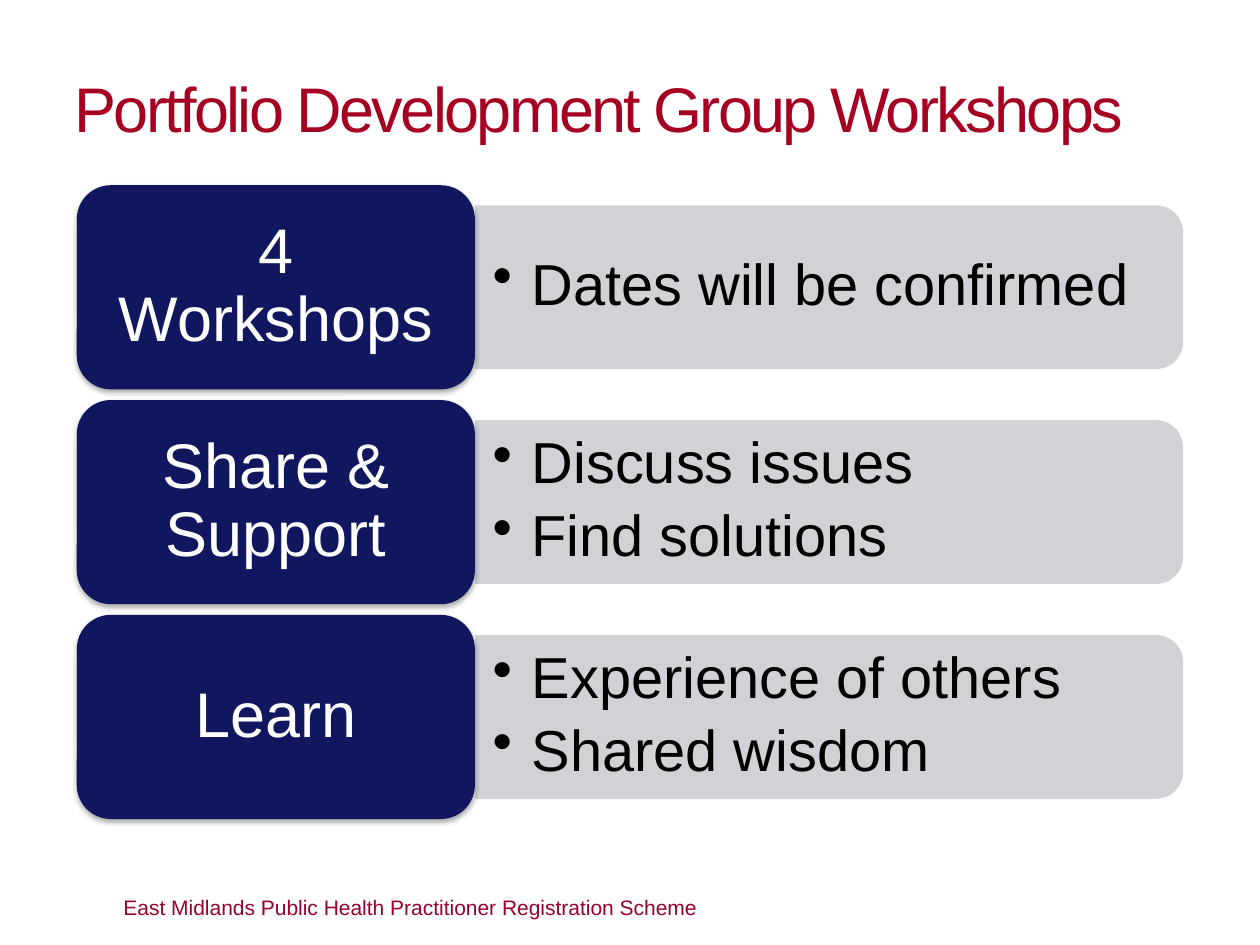
from lxml import etree
from pptx import Presentation
from pptx.dml.color import RGBColor
from pptx.enum.shapes import MSO_SHAPE
from pptx.enum.text import MSO_ANCHOR, PP_ALIGN
from pptx.oxml import parse_xml
from pptx.oxml.ns import nsdecls, qn
from pptx.util import Inches, Pt

ROUNDED = MSO_SHAPE.ROUNDED_RECTANGLE
ROUNDED_TOP = MSO_SHAPE.ROUND_2_SAME_RECTANGLE
MIDDLE, BOTTOM = MSO_ANCHOR.MIDDLE, MSO_ANCHOR.BOTTOM
LEFT, CENTER = PP_ALIGN.LEFT, PP_ALIGN.CENTER

COLORS = {"title": "A50021", "footer": "98002E", "label": "11175E",
          "panel": "CCCCD2", "light": "FFFFFF", "dark": "000000"}
FONT = "Arial"

ROWS = [
    ("4 Workshops", ["Dates will be confirmed"]),
    ("Share & Support", ["Discuss issues", "Find solutions"]),
    ("Learn", ["Experience of others", "Shared wisdom"]),
]
LABEL_LEFT, LABEL_WIDTH, LABEL_HEIGHT = 0.61, 3.16, 1.62
LABEL_PADDING = 0.08
PANEL_LEFT = LABEL_LEFT + LABEL_WIDTH
PANEL_WIDTH, PANEL_HEIGHT = 5.62, 1.3
FIRST_TOP, ROW_STEP = 1.47, 1.705


class SlideBuilder:
    def __init__(self, slide):
        self.slide = slide

    def shape(self, kind, left, top, width, height, color):
        shape = self.slide.shapes.add_shape(
            kind, Inches(left), Inches(top), Inches(width), Inches(height))
        shape.shadow.inherit = False
        shape.fill.solid()
        shape.fill.fore_color.rgb = RGBColor.from_string(COLORS[color])
        shape.line.fill.background()
        return shape

    def text(self, lines, left, top, width, height, size, color, anchor=MIDDLE,
             align=LEFT, insets=(0, 0), line_spacing=1.0, bullet_indent=0, tracking=0):
        """Add a text box; insets are horizontal and vertical, tracking is in points."""
        box = self.slide.shapes.add_textbox(
            Inches(left), Inches(top), Inches(width), Inches(height))
        frame = box.text_frame
        frame.word_wrap = True
        frame.vertical_anchor = anchor
        frame.margin_left = frame.margin_right = Inches(insets[0])
        frame.margin_top = frame.margin_bottom = Inches(insets[1])
        for index, line in enumerate(lines):
            paragraph = frame.add_paragraph() if index else frame.paragraphs[0]
            paragraph.alignment = align
            paragraph.line_spacing = line_spacing
            if index:
                paragraph.space_before = Pt(6)
            if bullet_indent:
                self.bullet(paragraph, bullet_indent)
            run = paragraph.add_run()
            run.text = line
            run.font.name = FONT
            run.font.size = Pt(size)
            run.font.color.rgb = RGBColor.from_string(COLORS[color])
            if tracking:
                run.font._element.set("spc", str(int(tracking * 100)))

    def bullet(self, paragraph, indent):
        properties = paragraph._p.get_or_add_pPr()
        properties.set("marL", str(Inches(indent)))
        properties.set("indent", str(-Inches(indent)))
        etree.SubElement(properties, qn("a:buChar")).set("char", "•")

    def panel(self, row_top, lines):
        """Add a grey panel, turned so that its rounded corners face right."""
        top = row_top + (LABEL_HEIGHT - PANEL_HEIGHT) / 2
        turn_offset = (PANEL_WIDTH - PANEL_HEIGHT) / 2
        shape = self.shape(ROUNDED_TOP, PANEL_LEFT + turn_offset, top - turn_offset,
                           PANEL_HEIGHT, PANEL_WIDTH, "panel")
        shape.rotation = 90
        color = shape._element.spPr.find(qn("a:solidFill")).find(qn("a:srgbClr"))
        etree.SubElement(color, qn("a:alpha")).set("val", "90000")
        self.text(lines, PANEL_LEFT, top + 0.06, PANEL_WIDTH - 0.06, PANEL_HEIGHT - 0.13,
                  33, "dark", insets=(0.14, 0.07), line_spacing=0.9, bullet_indent=0.31)

    def label(self, row_top, caption):
        shape = self.shape(ROUNDED, LABEL_LEFT, row_top, LABEL_WIDTH, LABEL_HEIGHT, "label")
        effects = shape._element.spPr.find(qn("a:effectLst"))
        effects.append(parse_xml(
            f'<a:outerShdw {nsdecls("a")} blurRad="{Pt(3.1)}" dist="{Pt(1.8)}" '
            f'dir="5400000" rotWithShape="0"><a:srgbClr val="{COLORS["dark"]}">'
            '<a:alpha val="35000"/></a:srgbClr></a:outerShdw>'))
        self.text([caption], LABEL_LEFT + LABEL_PADDING, row_top + LABEL_PADDING,
                  LABEL_WIDTH - 2 * LABEL_PADDING, LABEL_HEIGHT - 2 * LABEL_PADDING,
                  36, "light", align=CENTER, insets=(0.15, 0.07), line_spacing=0.9)


def main():
    presentation = Presentation()
    presentation.slide_width, presentation.slide_height = Inches(10), Inches(7.5)
    builder = SlideBuilder(presentation.slides.add_slide(presentation.slide_layouts[6]))

    builder.text(["Portfolio Development Group Workshops"], 0.59, 0.52, 8.78, 0.63,
                 36, "title", anchor=BOTTOM, tracking=-1.5)
    for index, (caption, lines) in enumerate(ROWS):
        row_top = FIRST_TOP + index * ROW_STEP
        builder.panel(row_top, lines)
        builder.label(row_top, caption)
    builder.text(["East Midlands Public Health Practitioner Registration Scheme"],
                 0.98, 6.9, 8.43, 0.6, 12, "footer")

    presentation.save("out.pptx")


if __name__ == "__main__":
    main()
